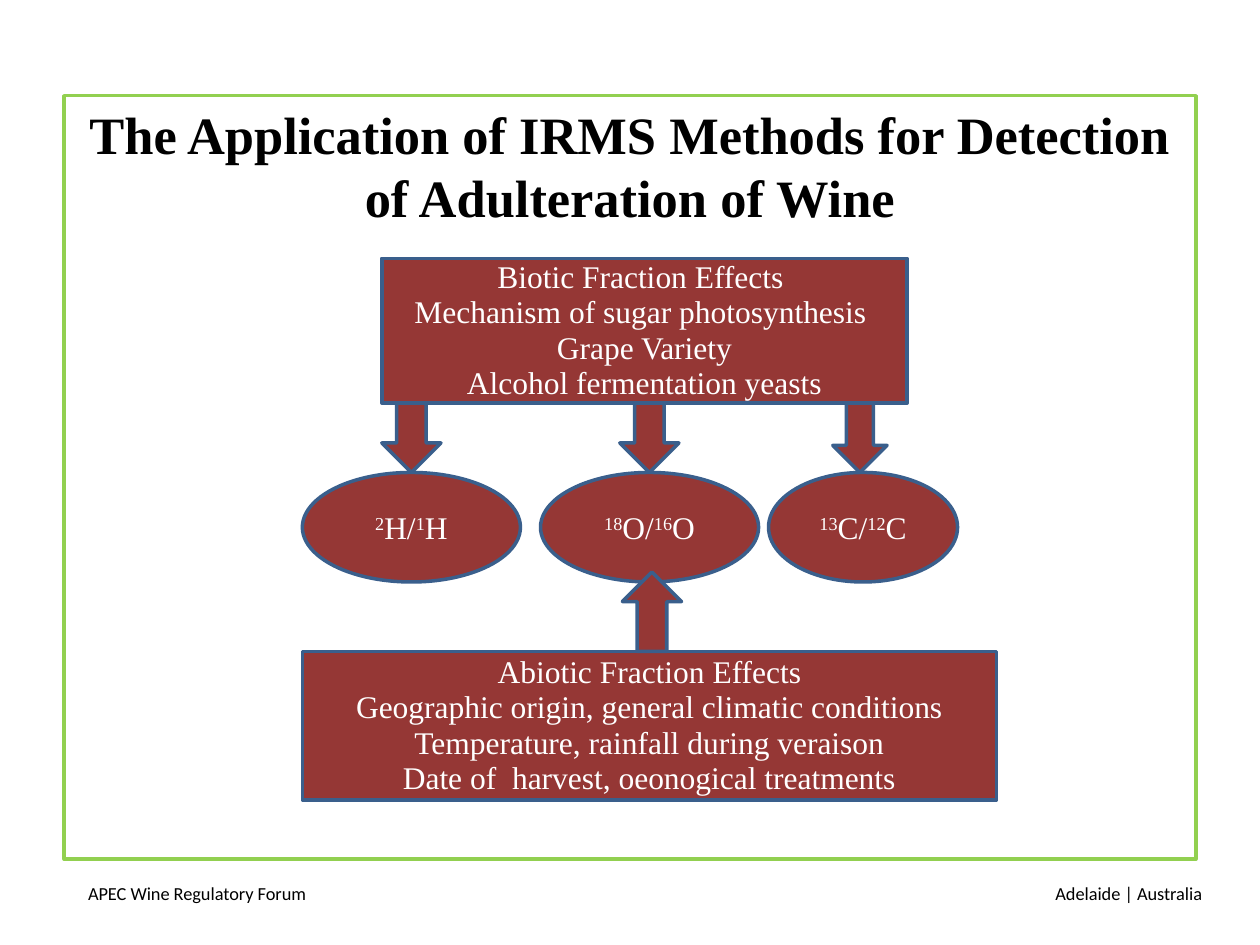
"""Build the slide on IRMS detection of wine adulteration."""
from pptx import Presentation
from pptx.dml.color import RGBColor
from pptx.enum.shapes import MSO_SHAPE
from pptx.enum.text import MSO_ANCHOR, PP_ALIGN
from pptx.util import Pt

BLACK = RGBColor(0x00, 0x00, 0x00)
WHITE = RGBColor(0xFF, 0xFF, 0xFF)
RED = RGBColor(0x95, 0x37, 0x35)
BLUE = RGBColor(0x3A, 0x5F, 0x8C)
GREEN = RGBColor(0x92, 0xD0, 0x50)

FOOTER = {"name": "Calibri", "size": Pt(10.5), "color": BLACK}
HEADING = {"name": "Times New Roman", "size": Pt(30), "bold": True, "color": BLACK}
BODY = {"name": "Times New Roman", "size": Pt(18), "color": WHITE}

TITLE = "The Application of IRMS Methods for Detection of Adulteration of Wine"
FOOTERS = [
    ("APEC Wine Regulatory Forum", 43.2, PP_ALIGN.LEFT),
    ("Adelaide | Australia", 524.9, PP_ALIGN.RIGHT),
]
BIOTIC = [
    "Biotic Fraction Effects ",
    "Mechanism of sugar photosynthesis ",
    "Grape Variety",
    "Alcohol fermentation yeasts",
]
ABIOTIC = [
    "Abiotic Fraction Effects",
    "Geographic origin, general climatic conditions",
    "Temperature, rainfall during veraison",
    "Date of  harvest, oeonogical treatments",
]
RATIOS = [
    ("H", "2", "1", 172.8, 124.6),
    ("O", "18", "16", 308.9, 124.6),
    ("C", "13", "12", 439.2, 108),
]
DOWN_ARROWS = [(218.2, 33.8), (354.2, 33.8), (475.9, 31)]
BIOTIC_TOP, BIOTIC_HEIGHT = 147.6, 82.8
RATIO_TOP, RATIO_HEIGHT = 270, 62.6
ABIOTIC_TOP, ABIOTIC_HEIGHT = 372.2, 85
UP_ARROW_TOP = 326.9


def add_run(p, text, style, raised=False):
    r = p.add_run()
    r.text = text
    for key, value in style.items():
        if key == "color":
            r.font.color.rgb = value
        else:
            setattr(r.font, key, value)
    if raised:
        r.font._element.set("baseline", "30000")


def fill_text(sp, paragraphs, style, align, anchor, spacing=None):
    tf = sp.text_frame
    tf.word_wrap = True
    tf.vertical_anchor = anchor
    for i, runs in enumerate(paragraphs):
        p = tf.add_paragraph() if i else tf.paragraphs[0]
        p.alignment = align
        p.line_spacing = spacing
        for text, raised in runs:
            add_run(p, text, style, raised)


def add_text(s, box, text, style, align, anchor):
    sp = s.shapes.add_textbox(*map(Pt, box))
    fill_text(sp, [[(text, False)]], style, align, anchor)


def add_figure(s, kind, box, fill=RED, line=BLUE, paragraphs=(), spacing=None):
    sp = s.shapes.add_shape(kind, *map(Pt, box))
    sp.shadow.inherit = False
    if fill is None:
        sp.fill.background()
    else:
        sp.fill.solid()
        sp.fill.fore_color.rgb = fill
    sp.line.color.rgb = line
    sp.line.width = Pt(2)
    if paragraphs:
        fill_text(sp, paragraphs, BODY, PP_ALIGN.CENTER, MSO_ANCHOR.MIDDLE, spacing)
    return sp


def add_effects(s, box, lines):
    sp = add_figure(s, MSO_SHAPE.RECTANGLE, box, spacing=0.94,
                    paragraphs=[[(line, False)] for line in lines])
    sp.text_frame.margin_top = sp.text_frame.margin_bottom = Pt(0)


def main():
    prs = Presentation()
    prs.slide_width, prs.slide_height = Pt(720), Pt(540)
    s = prs.slides.add_slide(prs.slide_layouts[6])

    for text, left, align in FOOTERS:
        add_text(s, (left, 500.4, 169.2, 28.8), text, FOOTER, align, MSO_ANCHOR.TOP)
    add_figure(s, MSO_SHAPE.RECTANGLE, (36.7, 54.7, 646.6, 436.3), None, GREEN)
    add_text(s, (36, 54.7, 648, 79.2), TITLE, HEADING,
             PP_ALIGN.CENTER, MSO_ANCHOR.MIDDLE)

    add_effects(s, (218.2, BIOTIC_TOP, 300.2, BIOTIC_HEIGHT), BIOTIC)
    for symbol, heavy, light, left, width in RATIOS:
        runs = [(heavy, True), (symbol + "/", False), (light, True), (symbol, False)]
        add_figure(s, MSO_SHAPE.OVAL, (left, RATIO_TOP, width, RATIO_HEIGHT),
                   paragraphs=[runs])
    add_effects(s, (172.8, ABIOTIC_TOP, 396.7, ABIOTIC_HEIGHT), ABIOTIC)

    arrow_top = BIOTIC_TOP + BIOTIC_HEIGHT
    for left, width in DOWN_ARROWS:
        add_figure(s, MSO_SHAPE.DOWN_ARROW,
                   (left, arrow_top, width, RATIO_TOP - arrow_top))
    add_figure(s, MSO_SHAPE.UP_ARROW,
               (355.7, UP_ARROW_TOP, 33.8, ABIOTIC_TOP - UP_ARROW_TOP))
    prs.save("out.pptx")


if __name__ == "__main__":
    main()
